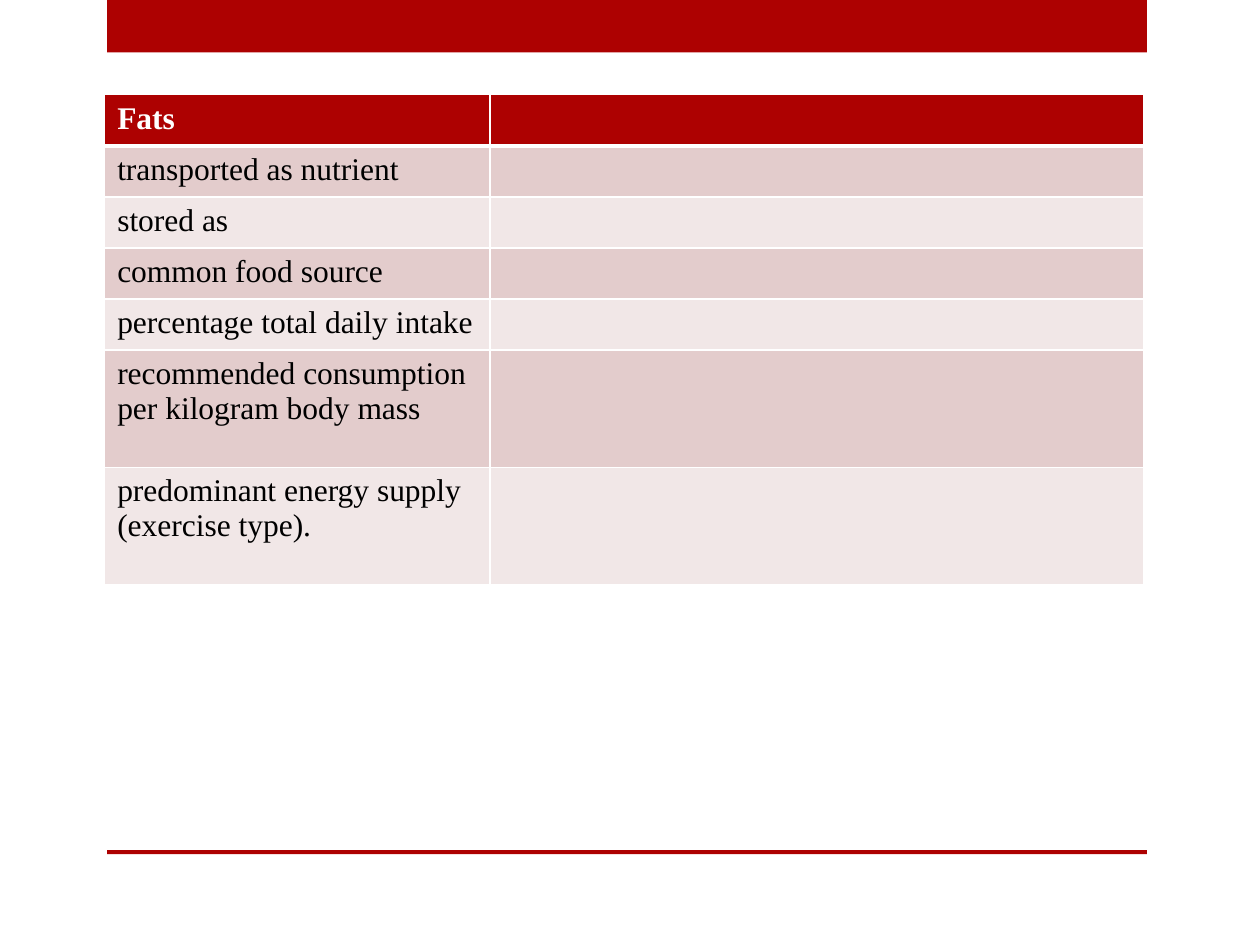
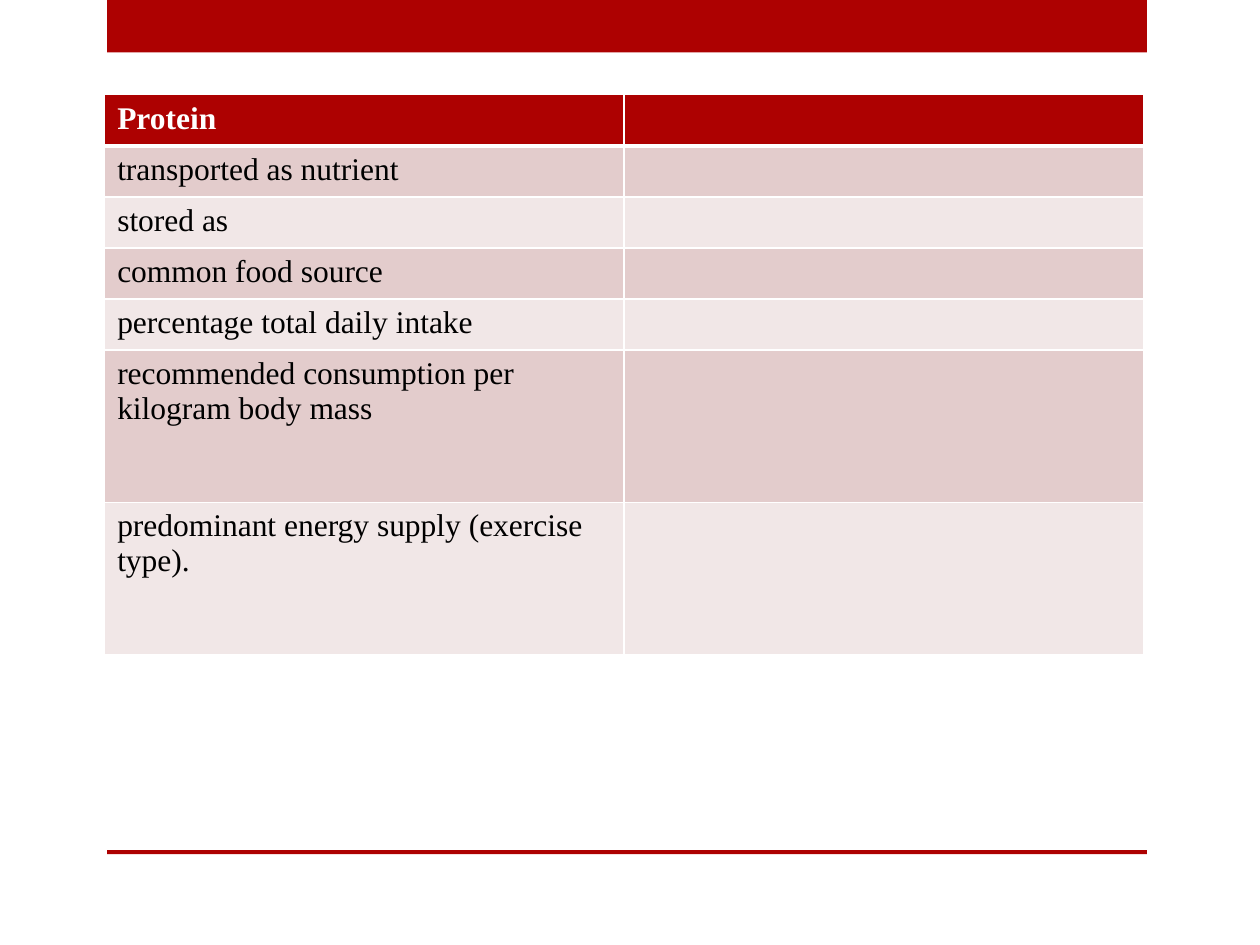
from dataclasses import dataclass

from lxml import etree
from pptx import Presentation
from pptx import util as u
from pptx.dml.color import RGBColor
from pptx.enum import shapes
from pptx.oxml import ns


@dataclass(frozen=True)
class Theme:
    accent: str = "AD0101"
    band_dark: str = "E3CCCC"
    band_light: str = "F1E7E7"
    white: str = "FFFFFF"
    black: str = "000000"
    font: str = "Times New Roman"
    body_size: int = 18
    thin_border: int = 1
    thick_border: int = 3


# Table content shared by the slides
TOPICS = (
    "transported as nutrient",
    "stored as",
    "common food source",
    "percentage total daily intake",
    "recommended consumption per kilogram body mass",
    "predominant energy supply (exercise type).",
)
TALL_ROWS = 2  # the last topics leave more room for answers
ROW_HEIGHT = 1.03

# Nutrient, column widths and tall row height in centimetres
NUTRIENTS = (
    ("Fats", (7.77, 13.18), 2.36),
    ("Protein", (10.47, 10.47), 3.07),
)


def write_text(text_frame, text, *, font, size, color, bold=False):
    run = text_frame.paragraphs[0].add_run()
    run.text = text
    run.font.name = font
    run.font.size = u.Pt(size)
    run.font.bold = bold
    run.font.color.rgb = RGBColor.from_string(color)


class Deck:
    """Holds the theme, the presentation and the current slide."""

    def __init__(self, theme):
        self.theme = theme
        self.presentation = Presentation()
        self.presentation.slide_width = u.Cm(25.4)
        self.presentation.slide_height = u.Cm(19.05)
        self.slide = None

    def add_slide(self):
        self.slide = self.presentation.slides.add_slide(
            self.presentation.slide_layouts[6])
        self.add_bar(top=0, height=1.06)
        self.add_bar(top=17.14, height=0.08)

    def add_bar(self, top, height):
        bar = self.slide.shapes.add_shape(
            shapes.MSO_SHAPE.RECTANGLE,
            u.Cm(2.16), u.Cm(top), u.Cm(20.96), u.Cm(height))
        bar.shadow.inherit = False
        bar.fill.solid()
        bar.fill.fore_color.rgb = RGBColor.from_string(self.theme.accent)
        bar.line.fill.background()

    def add_table(self, heading, topics, widths, heights):
        table = self.slide.shapes.add_table(
            len(heights), len(widths), u.Cm(2.11), u.Cm(1.91),
            u.Cm(sum(widths)), u.Cm(sum(heights))).table
        for column, width in zip(table.columns, widths):
            column.width = u.Cm(width)
        for row, height in zip(table.rows, heights):
            row.height = u.Cm(height)

        theme = self.theme
        for index, label in enumerate((heading, *topics)):
            is_header = index == 0
            band = theme.band_dark if index % 2 else theme.band_light
            for cell in table.rows[index].cells:
                self.style_cell(
                    cell, theme.accent if is_header else band,
                    top=theme.thick_border if index == 1 else theme.thin_border,
                    bottom=theme.thick_border if is_header else theme.thin_border)
            write_text(
                table.cell(index, 0).text_frame, label,
                font=theme.font, size=theme.body_size, bold=is_header,
                color=theme.white if is_header else theme.black)

    def style_cell(self, cell, fill, top, bottom):
        properties = cell._tc.get_or_add_tcPr()
        thin = self.theme.thin_border
        # Borders must come before the fill in the cell properties
        for side, width in (("L", thin), ("R", thin), ("T", top), ("B", bottom)):
            line = etree.SubElement(
                properties, ns.qn(f"a:ln{side}"), w=str(int(u.Pt(width))))
            paint = etree.SubElement(line, ns.qn("a:solidFill"))
            etree.SubElement(paint, ns.qn("a:srgbClr"), val=self.theme.white)
        cell.fill.solid()
        cell.fill.fore_color.rgb = RGBColor.from_string(fill)


def main():
    deck = Deck(Theme())
    normal_rows = 1 + len(TOPICS) - TALL_ROWS
    for nutrient, widths, tall_height in NUTRIENTS:
        deck.add_slide()
        heights = [ROW_HEIGHT] * normal_rows + [tall_height] * TALL_ROWS
        deck.add_table(nutrient, TOPICS, widths, heights)
    deck.presentation.save("out.pptx")


if __name__ == "__main__":
    main()
